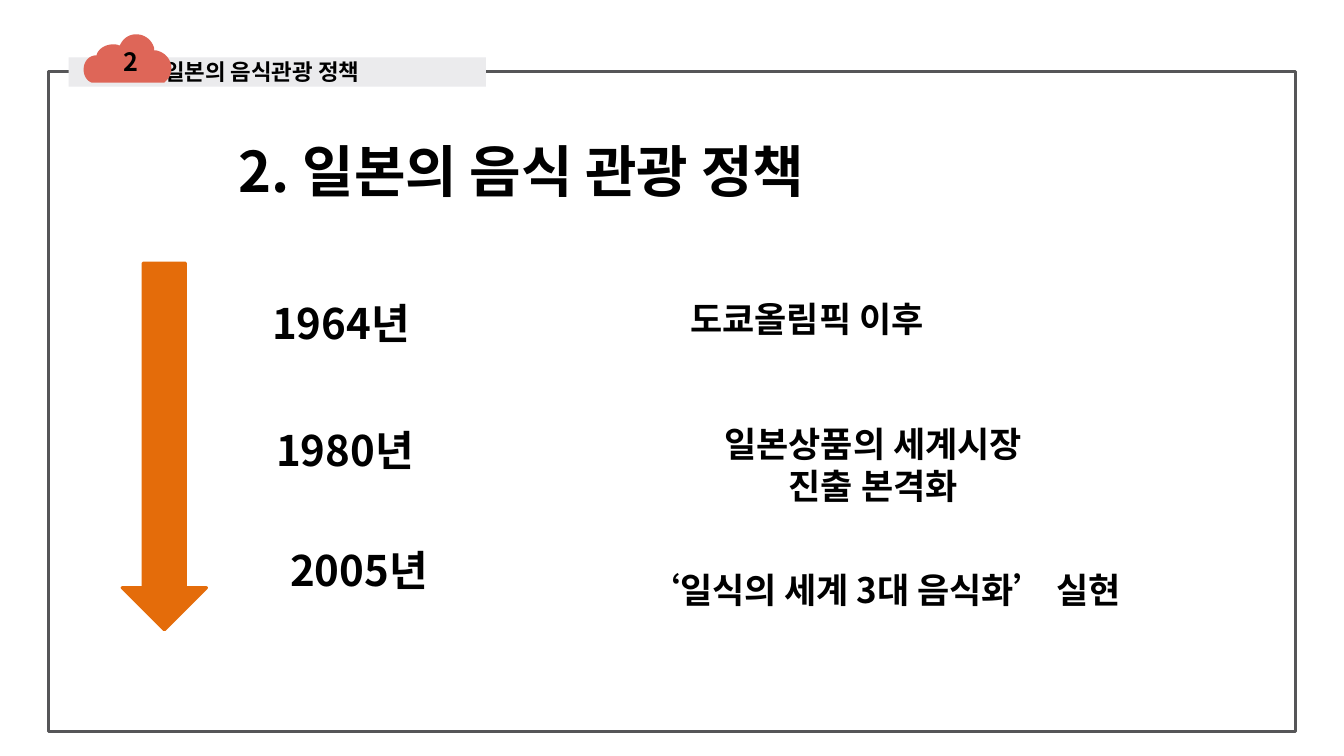
from pptx import Presentation
from pptx.dml.color import RGBColor
from pptx.enum.shapes import MSO_SHAPE
from pptx.enum.text import MSO_AUTO_SIZE, PP_ALIGN
from pptx.util import Inches, Pt
from lxml import etree

RECTANGLE, DOWN_ARROW = MSO_SHAPE.RECTANGLE, MSO_SHAPE.DOWN_ARROW
FIT_SHAPE = MSO_AUTO_SIZE.SHAPE_TO_FIT_TEXT
LEFT, CENTER = PP_ALIGN.LEFT, PP_ALIGN.CENTER
FONT = "Noto Sans CJK KR"
BLACK = RGBColor(0x00, 0x00, 0x00)
FRAME_GRAY = RGBColor(0x56, 0x56, 0x58)
TAB_GRAY = RGBColor(0xEB, 0xEB, 0xED)
CLOUD_RED = RGBColor(0xDE, 0x66, 0x58)
ARROW_ORANGE = RGBColor(0xE4, 0x6C, 0x0A)
DRAWING = "{http://schemas.openxmlformats.org/drawingml/2006/main}"

presentation = Presentation()
presentation.slide_width = Inches(13.33)
presentation.slide_height = Inches(7.5)
slide = presentation.slides.add_slide(presentation.slide_layouts[6])


def style_shape(shape, fill=None, line=None):
    shape.shadow.inherit = False
    for part, color in ((shape.fill, fill), (shape.line.fill, line)):
        if color is None:
            part.background()
        else:
            part.solid()
            part.fore_color.rgb = color
    if line is not None:
        shape.line.width = Pt(2)


def add_text(text, left, top, width, height, size, alignment=LEFT):
    box = slide.shapes.add_textbox(Inches(left), Inches(top), Inches(width), Inches(height))
    text_frame = box.text_frame
    text_frame.word_wrap = True
    text_frame.auto_size = FIT_SHAPE
    text_frame.text = text
    for paragraph in text_frame.paragraphs:
        paragraph.alignment = alignment
        for run in paragraph.runs:
            run.font.size = Pt(size)
            run.font.bold = True
            run.font.name = FONT
            run.font.color.rgb = BLACK
            # Korean glyphs take the East Asian font
            etree.SubElement(run.font._element, DRAWING + "ea", typeface=FONT)


# Frame and header tab
frame = slide.shapes.add_shape(RECTANGLE, Inches(0.48), Inches(0.71), Inches(12.37), Inches(6.55))
style_shape(frame, line=FRAME_GRAY)
tab = slide.shapes.add_shape(RECTANGLE, Inches(0.68), Inches(0.57), Inches(4.14), Inches(0.29))
style_shape(tab, fill=TAB_GRAY)
add_text("일본의 음식관광 정책", 1.53, 0.53, 3.63, 0.37, 16)

# Cloud badge: pairs are corners, sextuples are Bézier curves
cloud_start = (1.35, 0.34)
cloud_segments = [
    (1.44, 0.34, 1.51, 0.40, 1.53, 0.48), (1.53, 0.50), (1.55, 0.50),
    (1.64, 0.52, 1.70, 0.59, 1.70, 0.68), (1.70, 0.73, 1.68, 0.77, 1.65, 0.80),
    (1.63, 0.82), (0.92, 0.82), (0.91, 0.82),
    (0.86, 0.80, 0.83, 0.75, 0.83, 0.69), (0.83, 0.62, 0.87, 0.56, 0.94, 0.55),
    (0.96, 0.55), (0.96, 0.54),
    (0.98, 0.48, 1.05, 0.44, 1.12, 0.44), (1.14, 0.44, 1.16, 0.44, 1.18, 0.45),
    (1.19, 0.45), (1.22, 0.38, 1.28, 0.34, 1.35, 0.34),
]
CURVE_STEPS = 12
cloud_points = [cloud_start]
for segment in cloud_segments:
    if len(segment) == 2:
        cloud_points.append(segment)
        continue
    x0, y0 = cloud_points[-1]
    x1, y1, x2, y2, x3, y3 = segment
    for step in range(1, CURVE_STEPS + 1):
        t = step / CURVE_STEPS
        u = 1 - t
        a, b, c, d = u ** 3, 3 * u * u * t, 3 * u * t * t, t ** 3
        cloud_points.append((a * x0 + b * x1 + c * x2 + d * x3,
                             a * y0 + b * y1 + c * y2 + d * y3))
builder = slide.shapes.build_freeform(*cloud_start, scale=Inches(1))
builder = slide.shapes.build_freeform(Inches(cloud_start[0]), Inches(cloud_start[1]))
builder.add_line_segments([(Inches(x), Inches(y)) for x, y in cloud_points[1:]], close=True)
style_shape(builder.convert_to_shape(), fill=CLOUD_RED)
add_text("2", 1.13, 0.41, 0.4, 0.4, 18)

# Title
add_text("2. 일본의 음식 관광 정책", 2.27, 1.31, 8.8, 0.77, 40)

# Timeline arrow
arrow = slide.shapes.add_shape(DOWN_ARROW, Inches(1.21), Inches(2.61), Inches(0.84), Inches(3.64))
style_shape(arrow, fill=ARROW_ORANGE, line=ARROW_ORANGE)

# Years
for year, left, top in (("1964년", 2.6, 2.9), ("1980년", 2.64, 4.16), ("2005년", 2.78, 5.35)):
    add_text(year, left, top, 2.38, 0.61, 30)

# Events
add_text("도쿄올림픽 이후", 6.75, 2.9, 3.83, 0.52, 25)
add_text("일본상품의 세계시장\n진출 본격화", 5.97, 4.14, 5.38, 0.94, 25, CENTER)
add_text("‘일식의 세계 3대 음식화’ 실현", 5.18, 5.59, 7.16, 0.52, 25, CENTER)

presentation.save("out.pptx")
